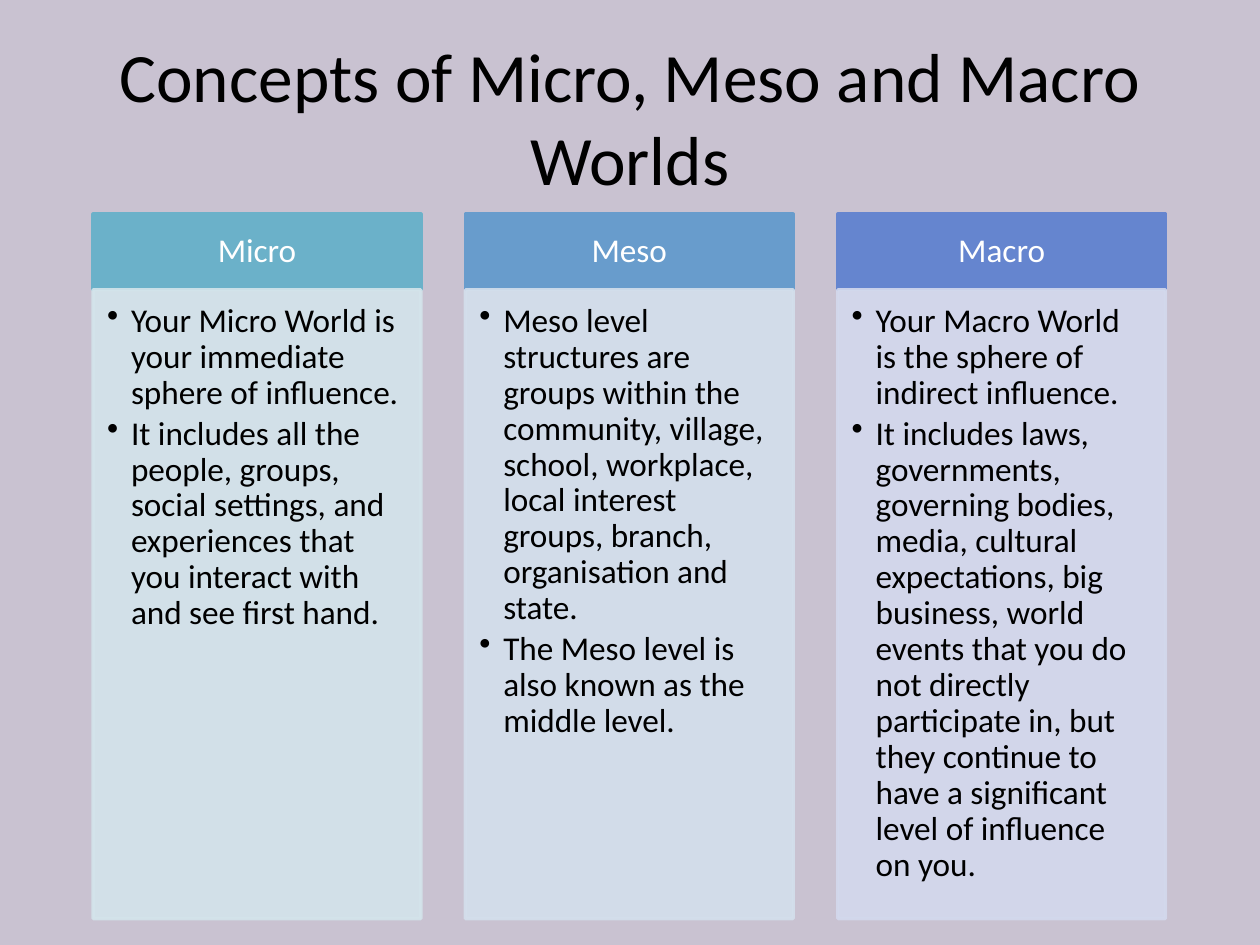
from pptx import Presentation
from pptx.dml.color import RGBColor
from pptx.enum.shapes import MSO_SHAPE as Preset
from pptx.enum.text import MSO_ANCHOR as Anchor, MSO_AUTO_SIZE as AutoSize, PP_ALIGN as Align
from pptx.oxml.ns import qn
from pptx.util import Inches, Pt
from lxml.etree import SubElement

FONT = "Calibri"
TEXT_SIZE = 19

# Column grid, in inches
LEFT, COLUMN_WIDTH, PITCH = 0.74, 2.6, 2.955
HEADING_TOP, HEADING_HEIGHT = 1.7, 0.6
BODY_TOP, BODY_HEIGHT = 2.3, 4.99

WORLDS = [
    ("Micro", "6BB1C9", "D4E4EB", [
        "Your Micro World is your immediate sphere of influence.",
        "It includes all the people, groups, social settings, and experiences "
        "that you interact with and see first hand."]),
    ("Meso", "689CCC", "D4DFEC", [
        "Meso level structures are groups within the community, village, school, "
        "workplace, local interest groups, branch, organisation and state.",
        "The Meso level is also known as the middle level."]),
    ("Macro", "6585CF", "D3D9ED", [
        "Your Macro World is the sphere of indirect influence.",
        "It includes laws, governments, governing bodies, media, cultural "
        "expectations, big business, world events that you do not directly "
        "participate in, but they continue to have a significant level of "
        "influence on you."]),
]


def color(hex_value):
    return RGBColor.from_string(hex_value)


class WorldsSlide:
    def __init__(self, deck, background):
        self.slide = deck.slides.add_slide(deck.slide_layouts[5])
        fill = self.slide.background.fill
        fill.solid()
        fill.fore_color.rgb = color(background)

    def style(self, paragraph, size, hex_value, align):
        paragraph.alignment = align
        for run in paragraph.runs:
            run.font.name = FONT
            run.font.size = Pt(size)
            run.font.color.rgb = color(hex_value)

    def title(self, text):
        title = self.slide.shapes.title
        title.left, title.top = Inches(0.5), Inches(0.3)
        title.width, title.height = Inches(9), Inches(1.25)
        frame = title.text_frame
        frame.text = text
        frame.auto_size = AutoSize.NONE
        frame.vertical_anchor = Anchor.MIDDLE
        self.style(frame.paragraphs[0], 39.6, "000000", Align.CENTER)

    def panel(self, column, top, height, hex_value, text, insets, opacity=100):
        panel = self.slide.shapes.add_shape(
            Preset.RECTANGLE, Inches(LEFT + column * PITCH), Inches(top),
            Inches(COLUMN_WIDTH), Inches(height))
        panel.shadow.inherit = False
        panel.line.width = Pt(2)
        for paint in (panel.fill, panel.line.fill):
            paint.solid()
            paint.fore_color.rgb = color(hex_value)
        if opacity < 100:
            for tint in panel._element.spPr.iter(qn("a:srgbClr")):
                SubElement(tint, qn("a:alpha"), val=str(opacity * 1000))
        frame = panel.text_frame
        frame.word_wrap = True
        (frame.margin_left, frame.margin_top,
         frame.margin_right, frame.margin_bottom) = map(Inches, insets)
        frame.text = text
        for paragraph in frame.paragraphs:
            paragraph.line_spacing = 0.9
        return frame

    def heading(self, column, text, hex_value):
        frame = self.panel(column, HEADING_TOP, HEADING_HEIGHT, hex_value, text,
                           (0.15, 0.08, 0.15, 0.08))
        frame.vertical_anchor = Anchor.MIDDLE
        self.style(frame.paragraphs[0], TEXT_SIZE, "FFFFFF", Align.CENTER)

    def bullets(self, column, points, hex_value):
        frame = self.panel(column, BODY_TOP, BODY_HEIGHT, hex_value,
                           "\n".join(points), (0.11, 0.11, 0.15, 0.17), opacity=90)
        frame.vertical_anchor = Anchor.TOP
        for paragraph in frame.paragraphs:
            self.style(paragraph, TEXT_SIZE, "000000", Align.LEFT)
            paragraph.space_after = Pt(0.15 * TEXT_SIZE)
            properties = paragraph._p.get_or_add_pPr()
            properties.set("marL", str(Inches(0.19)))
            properties.set("indent", str(-Inches(0.19)))
            SubElement(properties, qn("a:buChar"), char="•")


def main():
    deck = Presentation()
    deck.slide_width, deck.slide_height = Inches(10), Inches(7.5)
    worlds = WorldsSlide(deck, "C9C2D1")
    worlds.title("Concepts of Micro, Meso and Macro Worlds")

    # One heading and one list per world
    for column, (name, accent, tint, points) in enumerate(WORLDS):
        worlds.heading(column, name, accent)
        worlds.bullets(column, points, tint)

    deck.save("out.pptx")


if __name__ == "__main__":
    main()
